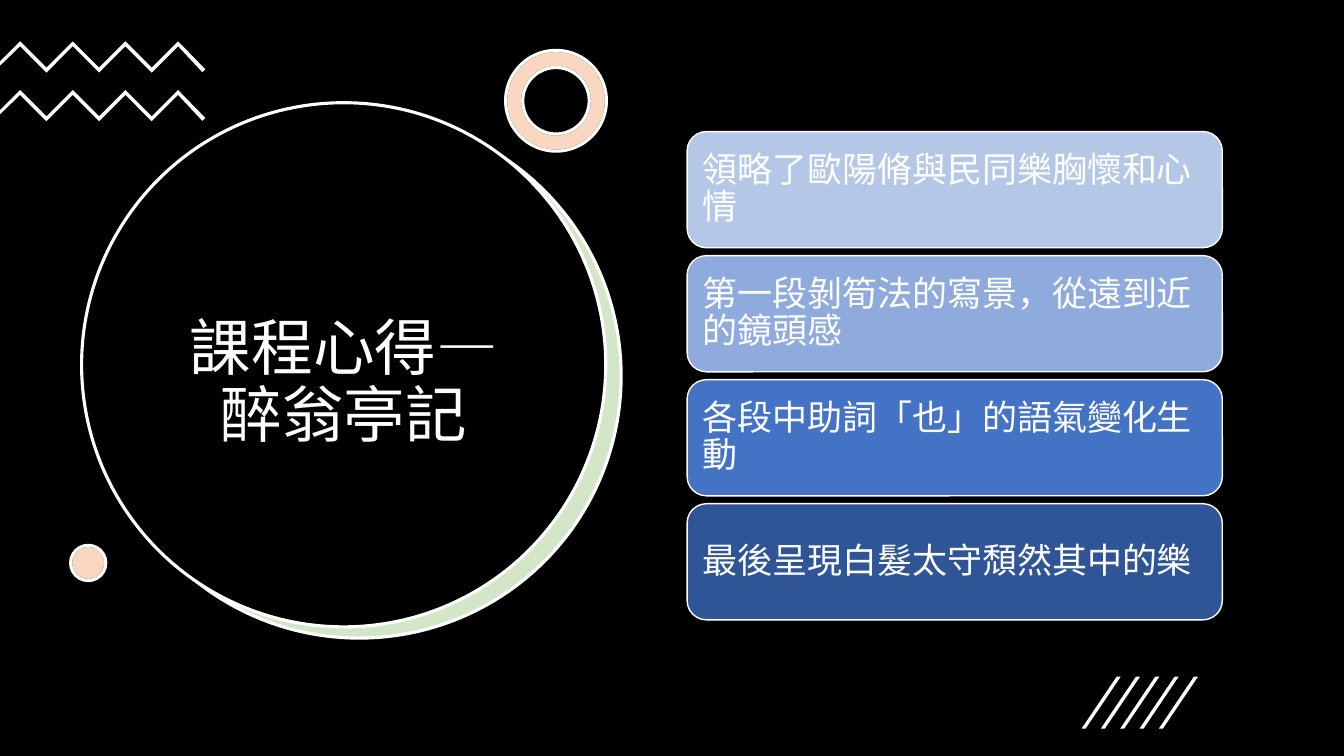
from pptx import Presentation
from pptx.dml.color import RGBColor
from pptx.enum.shapes import MSO_SHAPE as Kind
from pptx.enum.text import MSO_ANCHOR as Anchor, PP_ALIGN as Align
from pptx.oxml.ns import qn
from pptx.util import Pt
from lxml.etree import SubElement as sub

WHITE, BLACK, GREEN, PEACH = "FFFFFF", "000000", "70AD47", "ED7D31"
CARDS = [
    ("領略了歐陽脩與民同樂胸懷和心情", "B4C7E7"),
    ("第一段剝筍法的寫景，從遠到近的鏡頭感", "8FAADC"),
    ("各段中助詞「也」的語氣變化生動", "4472C4"),
    ("最後呈現白髮太守頹然其中的樂", "2F5597"),
]


def paint(fmt, tone):
    fmt.solid()
    fmt.fore_color.rgb = RGBColor.from_string(tone)


def apply(item, style):
    for name, value in style.items():
        setattr(item, name, value)


def dress(shape, fill, line=None, width=2.25, alpha=None):
    """Set fill, outline and fill opacity in percent."""
    shape.shadow.inherit = False
    paint(shape.fill, fill)
    if alpha:
        tone = shape.fill._xPr.find(qn("a:solidFill"))[0]
        sub(tone, qn("a:alpha")).set("val", str(alpha * 1000))
    if line:
        paint(shape.line.fill, line)
        shape.line.width = Pt(width)
    else:
        shape.line.fill.background()


def add(slide, kind, box, fill, *args, **more):
    shape = slide.shapes.add_shape(kind, *map(Pt, box))
    dress(shape, fill, *args, **more)
    return shape


def write(shape, text, size, align, inset):
    frame = shape.text_frame
    frame.text = text
    apply(frame, {
        "word_wrap": True, "vertical_anchor": Anchor.MIDDLE,
        "margin_left": Pt(7.2), "margin_right": Pt(7.2),
        "margin_top": Pt(inset), "margin_bottom": Pt(inset),
    })
    para = frame.paragraphs[0]
    apply(para, {"alignment": align, "line_spacing": 0.9})
    apply(para.font, {"size": Pt(size), "name": "Calibri"})
    para.font.color.rgb = RGBColor.from_string(WHITE)


def outline(slide, points):
    first, *rest = [(Pt(x), Pt(y)) for x, y in points]
    form = slide.shapes.build_freeform(*first, scale=1.0)
    form.add_line_segments(rest, close=True)
    dress(form.convert_to_shape(), WHITE)


def zigzag(slide, top):
    teeth = [(14.4 + 18.8 * i, top + 18.8 * (i % 2)) for i in range(7)]
    under = [(x, y + 3.5) for x, y in reversed(teeth)]
    tip = [(146.7, top + 20), (144.5, top + 22)]
    edge = [(0, top + 17.4), (0, top + 14.4)]
    outline(slide, teeth + tip + under + edge)


def stripe(slide, left):
    top, base = 483.4, 520.4
    outline(slide, [(left + 2.9, base), (left, base),
                    (left + 25, top), (left + 27.9, top)])


def accent(slide, kind, box):
    """Peach tint over a white base."""
    return [add(slide, kind, box, WHITE, BLACK),
            add(slide, kind, box, PEACH, WHITE, alpha=30)]


def main():
    deck = Presentation()
    deck.slide_width, deck.slide_height = Pt(960), Pt(540)
    slide = deck.slides.add_slide(deck.slide_layouts[6])
    add(slide, Kind.RECTANGLE, (0, 0, 960, 540), BLACK)

    # Large disc with its green crescent
    disc = 374.4
    add(slide, Kind.OVAL, (69.8, 82, disc, disc), WHITE)
    add(slide, Kind.OVAL, (69.3, 81.4, disc, disc), GREEN, WHITE, alpha=30)
    add(slide, Kind.OVAL, (58.3, 73.4, disc, disc), BLACK, WHITE)

    # Title
    title = slide.shapes.add_textbox(*map(Pt, (87, 147.6, 317.5, 253.4)))
    write(title, "課程心得—\v醉翁亭記", 44, Align.CENTER, 3.6)

    # Ornaments
    for top in (29.5, 64.3):
        zigzag(slide, top)
    for ring in accent(slide, Kind.DONUT, (361.2, 36, 72, 72)):
        ring.adjustments[0] = 0.17
    accent(slide, Kind.OVAL, (50.4, 389.5, 25.2, 25.2))

    # Cards
    for i, (text, tone) in enumerate(CARDS):
        box = (490.8, 94 + 88.6 * i, 382.3, 83)
        card = add(slide, Kind.ROUNDED_RECTANGLE, box, tone, WHITE, 1)
        write(card, text, 25, Align.LEFT, 7.2)

    # Slanted stripes
    for i in range(5):
        stripe(slide, 772.6 + 13.8 * i)

    deck.save("out.pptx")


if __name__ == "__main__":
    main()
